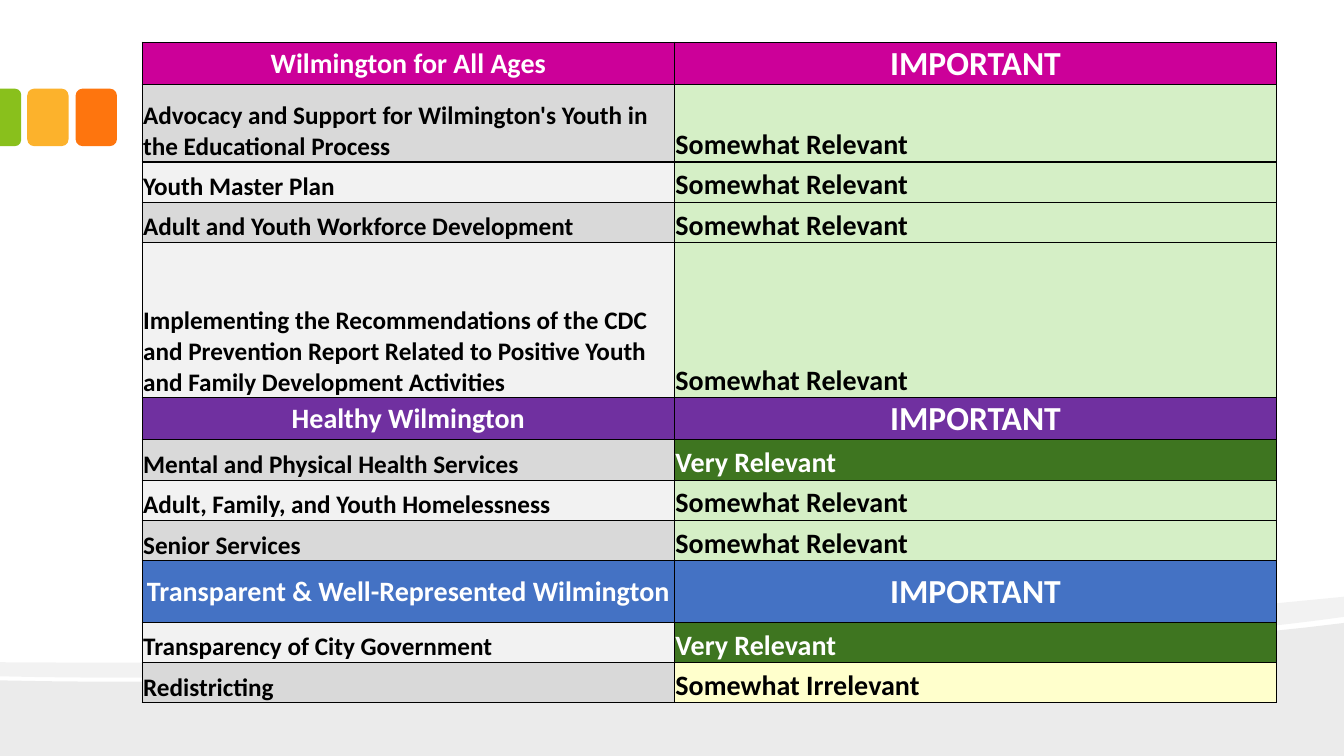
from lxml import etree
from pptx import Presentation
from pptx import util as u
from pptx.dml.color import RGBColor
from pptx.enum import shapes, text
from pptx.oxml import ns

PX = 9144
FONT = "Calibri"
COLORS = {
    "black": "000000", "white": "FFFFFF",
    "magenta": "CC0099", "purple": "7030A0", "blue": "4472C4",
    "dark_row": "D9D9D9", "light_row": "F2F2F2",
    "orange": "FE750E", "amber": "FCB22C", "green": "89C01C",
}
RATINGS = {
    "Somewhat Relevant": ("D5EFC6", "black"),
    "Very Relevant": ("3E7520", "white"),
    "Somewhat Irrelevant": ("FFFFCC", "black"),
}
SECTIONS = [
    ("Wilmington for All Ages", "magenta", 41, [
        ("Advocacy and Support for Wilmington's Youth in the Educational Process",
         "Somewhat Relevant", 77),
        ("Youth Master Plan", "Somewhat Relevant", 40),
        ("Adult and Youth Workforce Development", "Somewhat Relevant", 40),
        ("Implementing the Recommendations of the CDC and Prevention Report "
         "Related to Positive Youth and Family Development Activities",
         "Somewhat Relevant", 154),
    ]),
    ("Healthy Wilmington", "purple", 41, [
        ("Mental and Physical Health Services", "Very Relevant", 40),
        ("Adult, Family, and Youth Homelessness", "Somewhat Relevant", 40),
        ("Senior Services", "Somewhat Relevant", 40),
    ]),
    ("Transparent & Well-Represented Wilmington", "blue", 61, [
        ("Transparency of City Government", "Very Relevant", 40),
        ("Redistricting", "Somewhat Irrelevant", 40),
    ]),
]
TABLE_LEFT, TABLE_TOP = 141, 42
COLUMN_WIDTHS = (528, 597)
WAVES = [
    (8, [(1333, 618), (1333, 750), (0, 750), (0, 675),
         ((352, 683), (1042, 655), (1333, 618))]),
    (5, [(1333, 592), (1333, 612),
         ((1255, 623), (1149, 633), (1029, 641)),
         ((698, 663), (258, 677), (0, 671)),
         (0, 657), ((652, 662), (971, 627), (1333, 592))]),
]
TABS = [
    (shapes.MSO_SHAPE.ROUNDED_RECTANGLE, (75, 88, 41, 57), 0, "orange"),
    (shapes.MSO_SHAPE.ROUNDED_RECTANGLE, (27, 88, 41, 57), 0, "amber"),
    (shapes.MSO_SHAPE.ROUND_2_SAME_RECTANGLE, (-18, 106, 57, 21), 90, "green"),
]


def rgb(name):
    return RGBColor.from_string(COLORS.get(name, name))


def paint(shape, color):
    shape.shadow.inherit = False
    shape.fill.solid()
    shape.fill.fore_color.rgb = rgb(color)
    shape.line.fill.background()


def outline(segments, steps=24):
    points = []
    for segment in segments:
        if len(segment) == 2:
            points.append(segment)
            continue
        controls = (points[-1], *segment)
        for step in range(1, steps + 1):
            t = step / steps
            weights = ((1 - t) ** 3, 3 * t * (1 - t) ** 2, 3 * t * t * (1 - t), t ** 3)
            points.append(tuple(sum(w * c[axis] for w, c in zip(weights, controls))
                                for axis in (0, 1)))
    return [(round(x * PX), round(y * PX)) for x, y in points]


def add_wave(slide, opacity, segments):
    points = outline(segments)
    builder = slide.shapes.build_freeform(*points[0])
    builder.add_line_segments(points[1:], close=True)
    wave = builder.convert_to_shape()
    paint(wave, "black")
    color = wave.fill._xPr.find(".//" + ns.qn("a:srgbClr"))
    etree.SubElement(color, ns.qn("a:alpha"), val=str(opacity * 1000))


def add_borders(cell):
    properties = cell._tc.get_or_add_tcPr()
    for position, side in enumerate(("lnL", "lnR", "lnT", "lnB")):
        line = etree.Element(ns.qn("a:" + side), w=str(u.Pt(1)))
        fill = etree.SubElement(line, ns.qn("a:solidFill"))
        etree.SubElement(fill, ns.qn("a:srgbClr"), val=COLORS["black"])
        properties.insert(position, line)


def fill_cell(cell, words, size, color, background, header):
    cell.margin_left = cell.margin_right = cell.margin_top = PX
    cell.margin_bottom = 0
    cell.vertical_anchor = text.MSO_ANCHOR.MIDDLE if header else text.MSO_ANCHOR.BOTTOM
    cell.fill.solid()
    cell.fill.fore_color.rgb = rgb(background)
    cell.text_frame.text = words
    paragraph = cell.text_frame.paragraphs[0]
    paragraph.alignment = text.PP_ALIGN.CENTER if header else text.PP_ALIGN.LEFT
    font = paragraph.runs[0].font
    font.name, font.size, font.bold = FONT, u.Pt(size), True
    font.color.rgb = rgb(color)
    add_borders(cell)


def table_rows():
    rows = []
    item_count = 0
    for title, color, height, items in SECTIONS:
        rows.append((height, True, [(title, 20, "white", color),
                                    ("IMPORTANT", 24, "white", color)]))
        for topic, rating, item_height in items:
            band = "light_row" if item_count % 2 else "dark_row"
            background, font_color = RATINGS[rating]
            rows.append((item_height, False, [(topic, 18, "black", band),
                                              (rating, 20, font_color, background)]))
            item_count += 1
    return rows


def add_priorities(slide):
    rows = table_rows()
    frame = slide.shapes.add_table(
        len(rows), len(COLUMN_WIDTHS), TABLE_LEFT * PX, TABLE_TOP * PX,
        sum(COLUMN_WIDTHS) * PX, sum(row[0] for row in rows) * PX)
    table = frame.table
    table.first_row = table.horz_banding = False
    for column, width in zip(table.columns, COLUMN_WIDTHS):
        column.width = width * PX
    for row, (height, header, cells) in zip(table.rows, rows):
        row.height = height * PX
        for cell, content in zip(row.cells, cells):
            fill_cell(cell, *content, header)


def main():
    presentation = Presentation()
    presentation.slide_width, presentation.slide_height = 1333 * PX, 750 * PX
    slide = presentation.slides.add_slide(presentation.slide_layouts[6])
    for opacity, segments in WAVES:
        add_wave(slide, opacity, segments)
    for kind, box, rotation, color in TABS:
        tab = slide.shapes.add_shape(kind, *(length * PX for length in box))
        tab.rotation = rotation
        if rotation:
            tab.adjustments[0] = 0.29
        paint(tab, color)
    add_priorities(slide)
    presentation.save("out.pptx")


if __name__ == "__main__":
    main()
